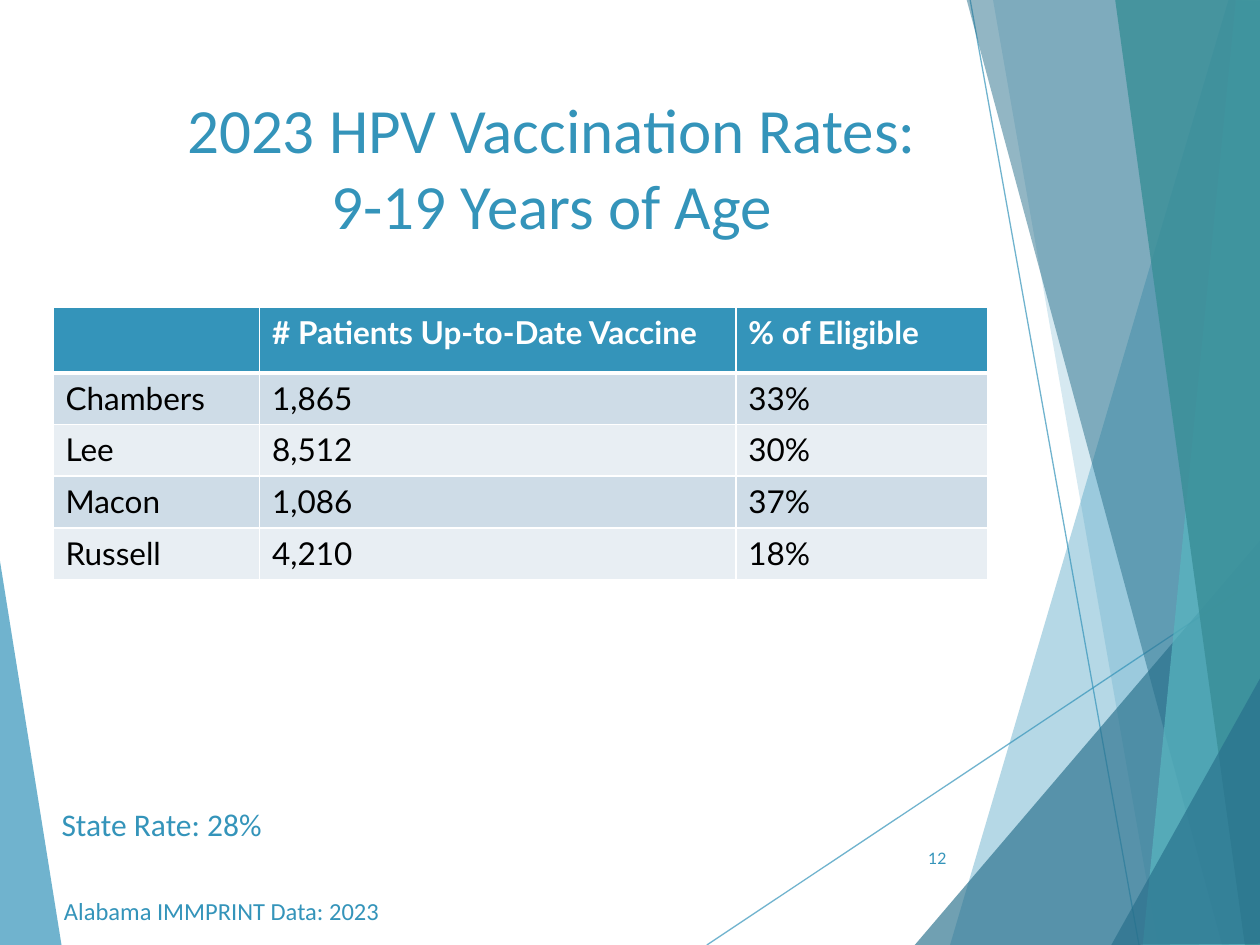
import dataclasses

import lxml.etree
import pptx
import pptx.dml.color
import pptx.enum.shapes
import pptx.enum.text
import pptx.oxml
import pptx.oxml.ns
import pptx.util

Inches = pptx.util.Inches
Pt = pptx.util.Pt
ALIGN = pptx.enum.text.PP_ALIGN
ANCHOR = pptx.enum.text.MSO_ANCHOR
qn = pptx.oxml.ns.qn

COLORS = {
    "blue": "3494BA", "deep": "276F8B", "aqua": "58B6C0", "teal": "3A8F98",
    "white": "FFFFFF", "black": "000000", "band_dark": "CEDCE7", "band_light": "E8EEF3",
}


@dataclasses.dataclass
class Facet:
    color: str
    opacity: int
    points: list[tuple[float, float]]


@dataclasses.dataclass
class Ray:
    start: tuple[float, float]
    end: tuple[float, float]


@dataclasses.dataclass
class Label:
    text: str
    box: tuple[float, float, float, float]
    size: int
    font: str = "Calibri"
    align: ALIGN = ALIGN.LEFT
    anchor: ANCHOR = ANCHOR.TOP


# Background decoration, from back to front
DECORATION = [
    Facet("blue", 70, [(-0.01, 4.39), (0.49, 7.51), (-0.01, 7.5)]),
    Ray((5.61, 7.5), (10.01, 4.57)),
    Ray((7.7, 0), (9.04, 7.5)),
    Facet("blue", 36, [(9.75, 0), (7.54, 7.5), (10.02, 7.51), (10.01, 0.01)]),
    Facet("blue", 20, [(7.88, -0.01), (9.19, 7.5), (10.01, 7.5), (10.01, -0.01)]),
    Facet("deep", 66, [(7.26, 7.5), (10, 4.29), (10.01, 7.5)]),
    Facet("deep", 50, [(7.67, -0.01), (9.7, 7.5), (10.01, 7.49), (10.01, -0.01)]),
    Facet("aqua", 70, [(9.81, -0.01), (9.07, 7.5), (10.01, 7.5), (10, -0.01)]),
    Facet("teal", 82, [(8.85, -0.01), (9.88, 7.5), (10.02, 7.5), (10, -0.01)]),
    Facet("deep", 66, [(8.82, 7.5), (10.02, 5.35), (10.02, 7.49)]),
]

TITLE_LINES = ["2023 HPV Vaccination Rates:", "9-19 Years of Age"]

LABELS = [
    Label("12", (7.05, 6.61, 0.56, 0.4), 9, "Lato", ALIGN.RIGHT, ANCHOR.MIDDLE),
    Label("State Rate: 28%", (0.39, 6.34, 5.75, 0.71), 18),
    Label("Alabama IMMPRINT Data: 2023", (0.41, 7.06, 6.63, 0.34), 14),
]

RATES = [
    ("", "# Patients Up-to-Date Vaccine", "% of Eligible"),
    ("Chambers", "1,865", "33%"),
    ("Lee", "8,512", "30%"),
    ("Macon", "1,086", "37%"),
    ("Russell", "4,210", "18%"),
]
COLUMN_WIDTHS = [1.64, 3.78, 2]
HEADER_HEIGHT, ROW_HEIGHT = 0.52, 0.41


def rgb(name: str) -> pptx.dml.color.RGBColor:
    return pptx.dml.color.RGBColor.from_string(COLORS[name])


def set_opacity(properties, percent: int) -> None:
    color = next(properties.iter(qn("a:srgbClr")))
    lxml.etree.SubElement(color, qn("a:alpha")).set("val", str(percent * 1000))


def add_run(paragraph, text: str, size: int, font: str, color: str, bold: bool = False) -> None:
    run = paragraph.add_run()
    run.text = text
    run.font.size = Pt(size)
    run.font.name = font
    run.font.bold = bold
    run.font.color.rgb = rgb(color)


def draw_facet(slide, facet: Facet) -> None:
    points = [(Inches(x), Inches(y)) for x, y in facet.points]
    builder = slide.shapes.build_freeform(*points[0])
    builder.add_line_segments(points[1:], close=True)
    shape = builder.convert_to_shape()
    shape.shadow.inherit = False
    shape.fill.solid()
    shape.fill.fore_color.rgb = rgb(facet.color)
    shape.line.fill.background()
    set_opacity(shape._element.spPr, facet.opacity)


def draw_ray(slide, ray: Ray) -> None:
    connector = slide.shapes.add_connector(
        pptx.enum.shapes.MSO_CONNECTOR.STRAIGHT, *map(Inches, ray.start + ray.end))
    connector.line.color.rgb = rgb("blue")
    connector.line.width = Pt(0.75)
    properties = connector._element.spPr
    set_opacity(properties, 70)
    lxml.etree.SubElement(properties, qn("a:effectLst"))


def draw_title(slide) -> None:
    title = slide.shapes.title
    title.left, title.top, title.width, title.height = map(Inches, (0.67, 0.67, 7.42, 1.44))
    frame = title.text_frame
    frame.auto_size = pptx.enum.text.MSO_AUTO_SIZE.NONE
    frame.vertical_anchor = ANCHOR.TOP
    paragraph = frame.paragraphs[0]
    paragraph.alignment = ALIGN.CENTER
    for index, line in enumerate(TITLE_LINES):
        if index:
            paragraph.add_line_break()
        add_run(paragraph, line, 36, "Calibri", "blue")


def draw_label(slide, label: Label) -> None:
    frame = slide.shapes.add_textbox(*map(Inches, label.box)).text_frame
    frame.word_wrap = True
    frame.vertical_anchor = label.anchor
    paragraph = frame.paragraphs[0]
    paragraph.alignment = label.align
    add_run(paragraph, label.text, label.size, label.font, "blue")


def set_borders(cell, bottom_width: float) -> None:
    properties = cell._tc.get_or_add_tcPr()
    widths = {"lnL": 1, "lnR": 1, "lnT": 1, "lnB": bottom_width}
    for index, (side, width) in enumerate(widths.items()):
        border = properties.makeelement(qn(f"a:{side}"), {"w": str(Pt(width))})
        fill = lxml.etree.SubElement(border, qn("a:solidFill"))
        lxml.etree.SubElement(fill, qn("a:srgbClr")).set("val", COLORS["white"])
        properties.insert(index, border)


def draw_table(slide) -> None:
    height = HEADER_HEIGHT + ROW_HEIGHT * (len(RATES) - 1)
    table = slide.shapes.add_table(
        len(RATES), len(COLUMN_WIDTHS), Inches(0.42), Inches(2.44),
        Inches(sum(COLUMN_WIDTHS)), Inches(height)).table
    for column, width in zip(table.columns, COLUMN_WIDTHS):
        column.width = Inches(width)
    for row_index, values in enumerate(RATES):
        header = row_index == 0
        band = "band_dark" if row_index % 2 else "band_light"
        table.rows[row_index].height = Inches(HEADER_HEIGHT if header else ROW_HEIGHT)
        for column_index, value in enumerate(values):
            cell = table.cell(row_index, column_index)
            cell.fill.solid()
            cell.fill.fore_color.rgb = rgb("blue" if header else band)
            set_borders(cell, 3 if header else 1)
            if value:
                add_run(cell.text_frame.paragraphs[0], value, 18, "Lato",
                        "white" if header else "black", header)


def main() -> None:
    presentation = pptx.Presentation()
    presentation.slide_width, presentation.slide_height = Inches(10), Inches(7.5)
    slide = presentation.slides.add_slide(presentation.slide_layouts[5])
    for part in DECORATION:
        if isinstance(part, Ray):
            draw_ray(slide, part)
        else:
            draw_facet(slide, part)
    draw_title(slide)
    draw_table(slide)
    for label in LABELS:
        draw_label(slide, label)
    presentation.save("out.pptx")


if __name__ == "__main__":
    main()
